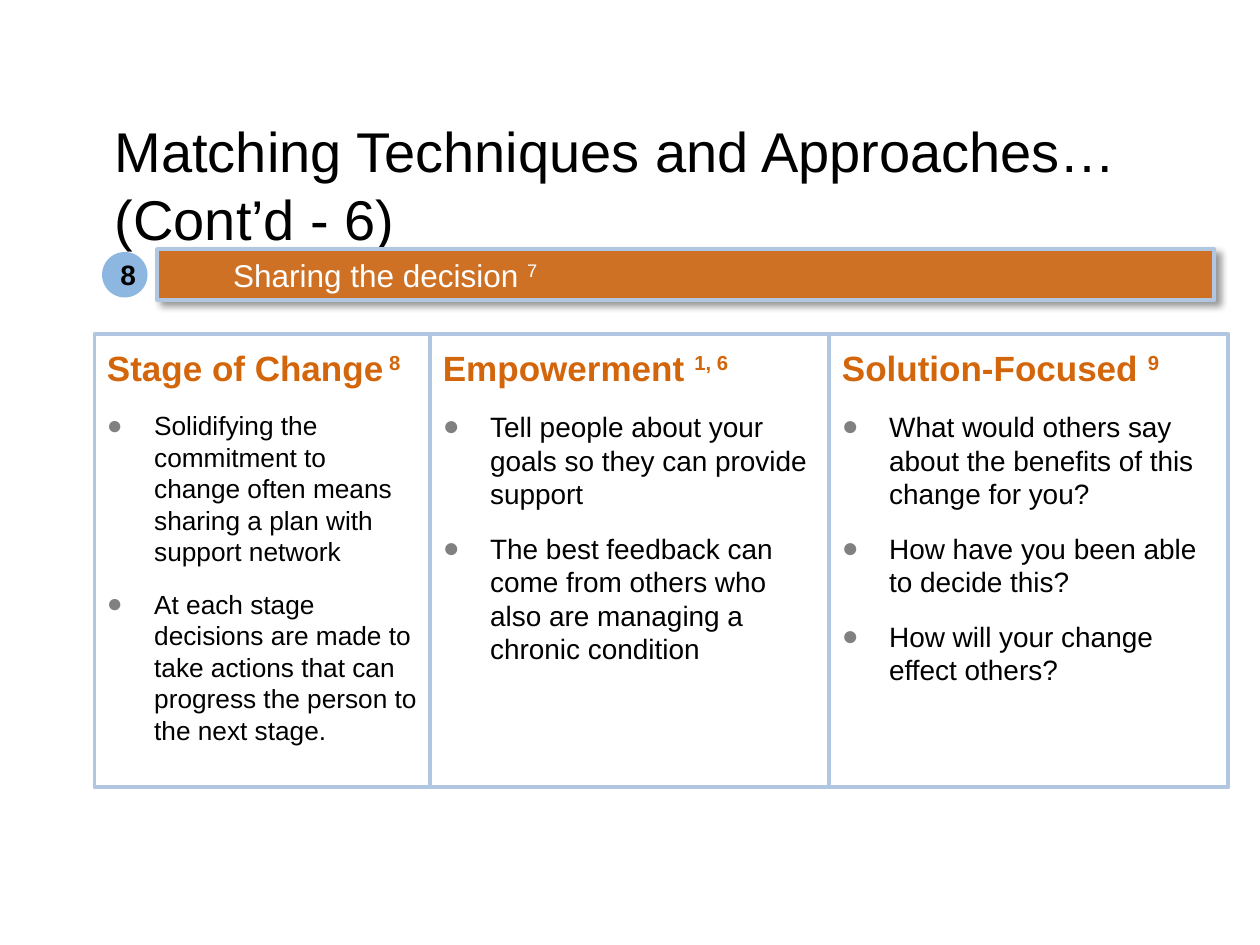
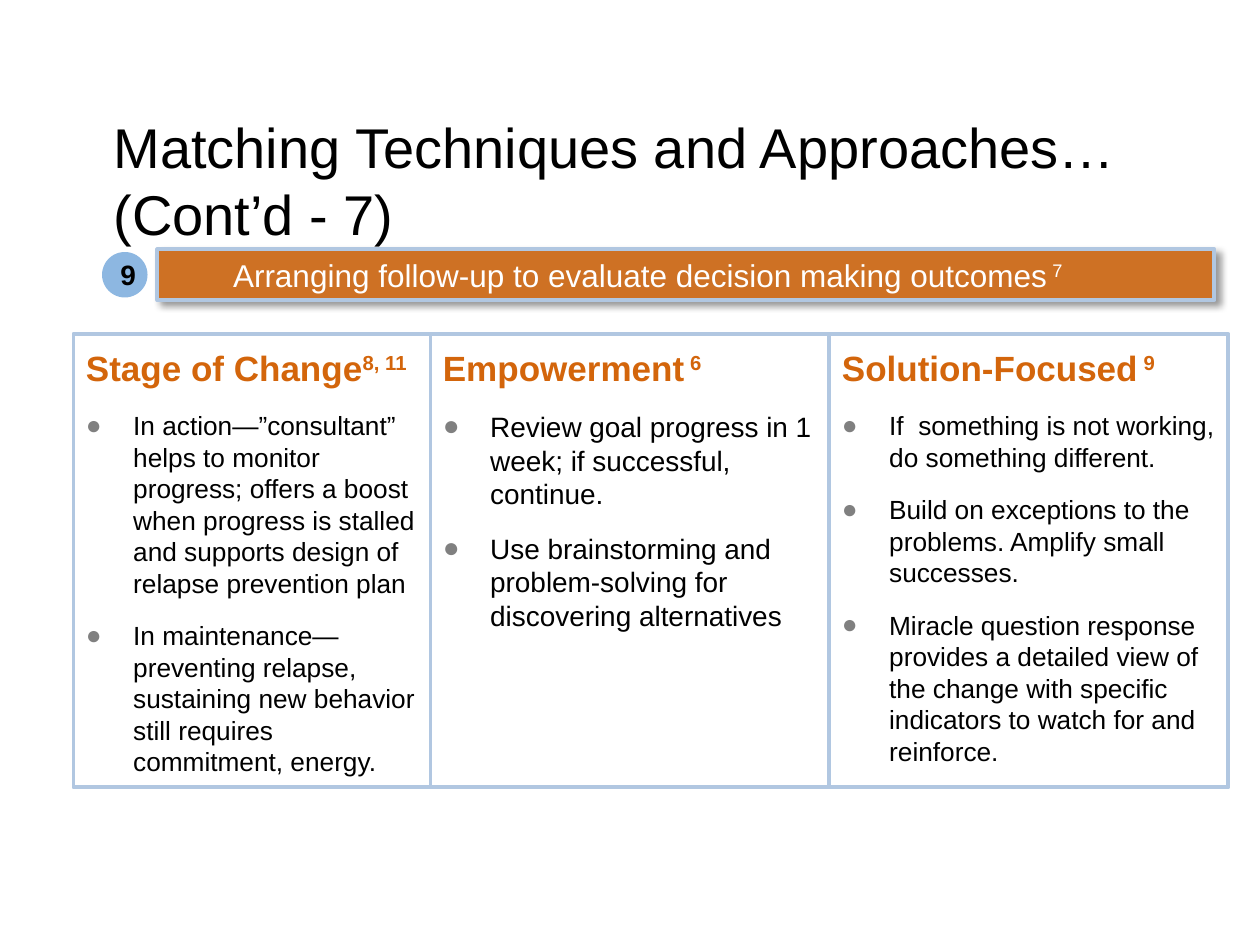
"""Build two slides that match counselling techniques to approaches."""
from lxml import etree
from pptx import Presentation
from pptx.dml.color import RGBColor
from pptx.enum.shapes import MSO_SHAPE
from pptx.enum.text import MSO_ANCHOR, MSO_AUTO_SIZE, PP_ALIGN
from pptx.oxml import parse_xml
from pptx.oxml.ns import nsdecls, qn
from pptx.util import Pt

RECT, OVAL = MSO_SHAPE.RECTANGLE, MSO_SHAPE.OVAL
TOP, MIDDLE = MSO_ANCHOR.TOP, MSO_ANCHOR.MIDDLE
LEFT, CENTER = PP_ALIGN.LEFT, PP_ALIGN.CENTER
NO_FIT = MSO_AUTO_SIZE.NONE

BLACK = RGBColor(0x00, 0x00, 0x00)
WHITE = RGBColor(0xFF, 0xFF, 0xFF)
ORANGE = RGBColor(0xCE, 0x71, 0x24)
HEADING = RGBColor(0xD3, 0x65, 0x0B)
BORDER = RGBColor(0xB1, 0xC7, 0xE1)
BADGE = RGBColor(0x8D, 0xB7, 0xE1)

CARD_TOP, CARD_HEIGHT = 190.8, 259.2
CARD_EDGES = [246, 474, 702]
INDENT = 27

SHADOW = (
    f'<a:effectLst {nsdecls("a")}><a:outerShdw blurRad="50800" dist="38100" dir="2700000" '
    'algn="tl" rotWithShape="0"><a:srgbClr val="000000"><a:alpha val="40000"/></a:srgbClr>'
    "</a:outerShdw></a:effectLst>"
)

SLIDES = [
    {
        "title": "Matching Techniques and Approaches… (Cont’d - 6)",
        "title_at": (58.3, 59.8),
        "step": "8",
        "band": ("Sharing the decision ", "7"),
        "left": 54,
        "cards": [
            ("Stage of Change", " 8", 15, [
                "Solidifying the commitment to change often means sharing a plan with support network",
                "At each stage decisions are made to take actions that can progress the person to "
                "the next stage.",
            ]),
            ("Empowerment ", "1, 6", 16, [
                "Tell people about your goals so they can provide support",
                "The best feedback can come from others who also are managing a chronic condition",
            ]),
            ("Solution-Focused ", "9", 16, [
                "What would others say about the benefits of this change for you?",
                "How have you been able to decide this?",
                "How will your change effect others?",
            ]),
        ],
    },
    {
        "title": "Matching Techniques and Approaches… (Cont’d - 7)",
        "title_at": (57.6, 57),
        "step": "9",
        "band": ("Arranging follow-up to evaluate decision making outcomes", " 7"),
        "left": 42,
        "cards": [
            ("Stage of Change", "8, 11", 15, [
                "In action—”consultant” helps to monitor progress; offers a boost when progress "
                "is stalled and supports design of relapse prevention plan",
                "In maintenance—preventing relapse, sustaining new behavior still requires "
                "commitment, energy.",
            ]),
            ("Empowerment", " 6", 16, [
                "Review goal progress in 1 week; if successful, continue.",
                "Use brainstorming and problem-solving for discovering alternatives",
            ]),
            ("Solution-Focused", " 9", 15, [
                "If  something is not working, do something different.",
                "Build on exceptions to the problems. Amplify small successes.",
                "Miracle question response provides a detailed view of the change with specific "
                "indicators to watch for and reinforce.",
            ]),
        ],
    },
]


def add_text(p, text, size=16, color=BLACK, bold=False, sup="", bullet=False, align=LEFT):
    p.alignment = align
    if bullet:
        p.space_before = Pt(12)
        pPr = p._p.get_or_add_pPr()
        pPr.set("marL", str(Pt(INDENT)))
        pPr.set("indent", str(-Pt(INDENT)))
        color_tag = etree.SubElement(pPr, qn("a:buClr"))
        etree.SubElement(color_tag, qn("a:srgbClr"), val="808080")
        etree.SubElement(pPr, qn("a:buFont"), typeface="Arial")
        etree.SubElement(pPr, qn("a:buChar"), char="●")
    for part, raised in ((text, False), (sup, True)):
        if part:
            r = p.add_run()
            r.text = part
            r.font.name, r.font.size, r.font.bold = "Arial", Pt(size), bold
            r.font.color.rgb = color
            if raised:
                r._r.get_or_add_rPr().set("baseline", "30000")


def add_box(s, kind, box, fill=None, line=None, anchor=TOP, insets=(7.2, 7.2, 7.2, 3.6)):
    sp = s.shapes.add_shape(kind, *map(Pt, box))
    sp.shadow.inherit = False
    if fill is None:
        sp.fill.background()
    else:
        sp.fill.solid()
        sp.fill.fore_color.rgb = fill
    if line is None:
        sp.line.fill.background()
    else:
        sp.line.color.rgb = line
        sp.line.width = Pt(2.25)
    tf = sp.text_frame
    tf.word_wrap = True
    tf.vertical_anchor = anchor
    tf.margin_left, tf.margin_top, tf.margin_right, tf.margin_bottom = map(Pt, insets)
    return sp


prs = Presentation()
prs.slide_width, prs.slide_height = Pt(720), Pt(540)

for data in SLIDES:
    s = prs.slides.add_slide(prs.slide_layouts[5])

    title = s.shapes.title
    title.left, title.top = map(Pt, data["title_at"])
    title.width, title.height = Pt(644.4), Pt(66.2)
    tf = title.text_frame
    tf.word_wrap, tf.auto_size, tf.vertical_anchor = True, NO_FIT, TOP
    tf.margin_top = Pt(7)
    tf.margin_bottom = 0
    add_text(tf.paragraphs[0], data["title"], size=32)

    badge = add_box(s, OVAL, (58.3, 144, 26, 26), fill=BADGE, anchor=MIDDLE, insets=(4, 0, 0, 0))
    badge.text_frame.word_wrap = False
    add_text(badge.text_frame.paragraphs[0], data["step"], bold=True, align=CENTER)

    band = add_box(s, RECT, (90, 142.5, 604, 29), fill=ORANGE, line=BORDER,
                   anchor=MIDDLE, insets=(43.2, 3.6, 7.2, 3.6))
    spPr = band._element.spPr
    spPr.replace(spPr.find(qn("a:effectLst")), parse_xml(SHADOW))
    text, sup = data["band"]
    add_text(band.text_frame.paragraphs[0], text, size=18, color=WHITE, sup=sup)

    left = data["left"]
    for right, (heading, sup, size, points) in zip(CARD_EDGES, data["cards"]):
        card = add_box(s, RECT, (left, CARD_TOP, right - left, CARD_HEIGHT), line=BORDER)
        tf = card.text_frame
        add_text(tf.paragraphs[0], heading, size=20, color=HEADING, bold=True, sup=sup)
        for point in points:
            add_text(tf.add_paragraph(), point, size=size, bullet=True)
        left = right

prs.save("out.pptx")
